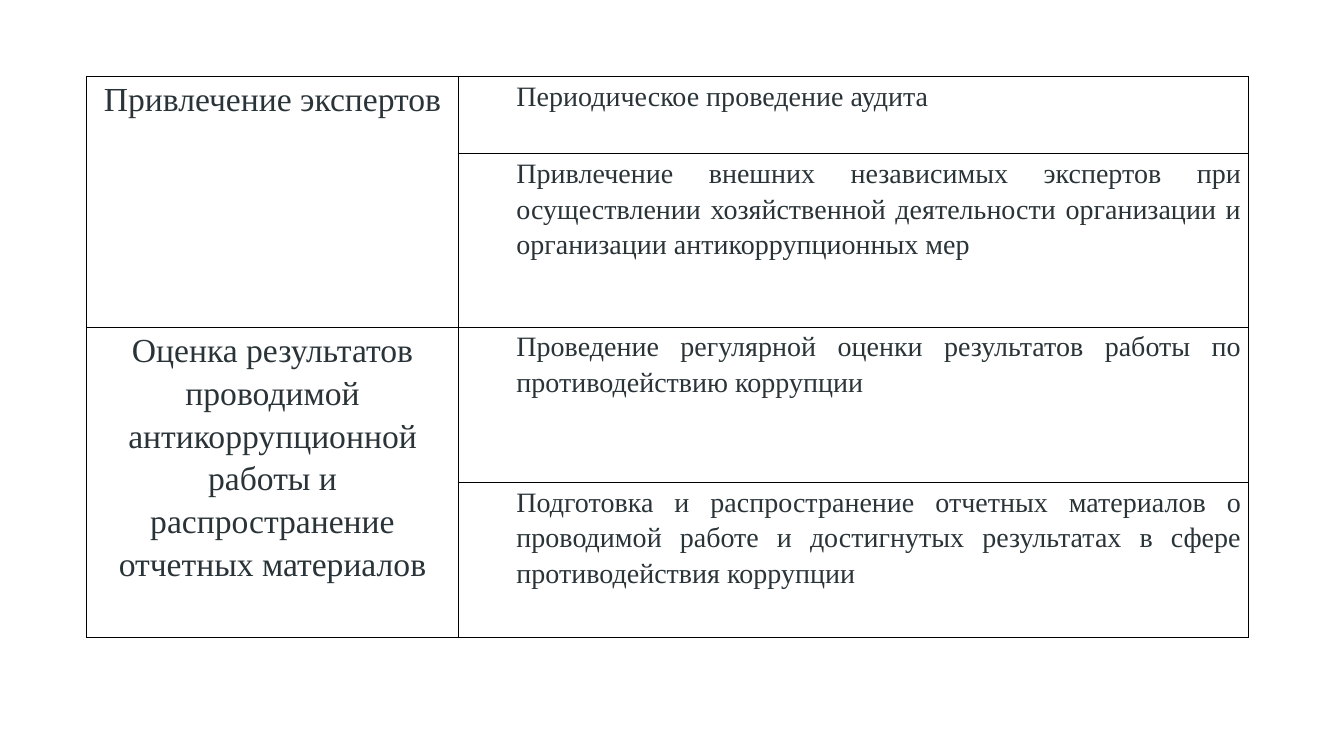
from lxml.etree import SubElement
from pptx import Presentation
from pptx.dml.color import RGBColor
from pptx.enum.text import MSO_ANCHOR, PP_ALIGN
from pptx.oxml.ns import qn
from pptx.util import Pt

COLORS = {"text": "2A3438", "border": "000000"}
FONT = "Times New Roman"
COL_WIDTHS = [265.7, 564.5]
ROW_HEIGHTS = [55.3, 123.8, 111, 111]
SECTIONS = [
    ("Привлечение экспертов", [
        "Периодическое проведение аудита",
        "Привлечение внешних независимых экспертов при осуществлении "
        "хозяйственной деятельности организации и организации антикоррупционных мер",
    ]),
    ("Оценка результатов проводимой антикоррупционной работы и "
     "распространение отчетных материалов", [
        "Проведение регулярной оценки результатов работы по противодействию коррупции",
        "Подготовка и распространение отчетных материалов о проводимой работе "
        "и достигнутых результатах в сфере противодействия коррупции",
    ]),
]


def set_borders(cell):
    """Draw a thin solid line on all four sides of a cell."""
    tcPr = cell._tc.get_or_add_tcPr()
    for i, side in enumerate(("lnL", "lnR", "lnT", "lnB")):
        ln = SubElement(tcPr, qn(f"a:{side}"), w=str(Pt(1)))
        fill = SubElement(ln, qn("a:solidFill"))
        SubElement(fill, qn("a:srgbClr"), val=COLORS["border"])
        tcPr.insert(i, ln)


def write_cell(cell, text, size, align, indent=0):
    """Set the text of a cell and format its paragraph."""
    cell.text_frame.text = text
    p = cell.text_frame.paragraphs[0]
    p.alignment = align
    p.line_spacing = 1.15
    pPr = p._p.get_or_add_pPr()
    pPr.set("marL", str(Pt(indent)))
    pPr.set("indent", "0")
    r = p.runs[0]
    r.font.size = Pt(size)
    r.font.name = FONT
    r.font.color.rgb = RGBColor.from_string(COLORS["text"])


def add_measures_table(s, left, top, col_widths, row_heights):
    """Place the table of sections and their measures."""
    table = s.shapes.add_table(
        len(row_heights), len(col_widths), Pt(left), Pt(top),
        Pt(sum(col_widths)), Pt(sum(row_heights))).table
    table.first_row = False
    table.horz_banding = False
    for col, width in zip(table.columns, col_widths):
        col.width = Pt(width)
    for row, height in zip(table.rows, row_heights):
        row.height = Pt(height)
    for cell in table.iter_cells():
        cell.fill.background()
        cell.margin_left = cell.margin_right = Pt(5.4)
        cell.margin_top = cell.margin_bottom = 0
        cell.vertical_anchor = MSO_ANCHOR.TOP
        set_borders(cell)

    first = 0
    for heading, measures in SECTIONS:
        last = first + len(measures) - 1
        table.cell(first, 0).merge(table.cell(last, 0))
        write_cell(table.cell(first, 0), heading, 24, PP_ALIGN.CENTER)
        for i, measure in enumerate(measures, first):
            write_cell(table.cell(i, 1), measure, 20, PP_ALIGN.JUSTIFY, 36)
        first = last + 1


def main():
    """Build the slide and save it."""
    prs = Presentation()
    prs.slide_width, prs.slide_height = Pt(960), Pt(540)
    s = prs.slides.add_slide(prs.slide_layouts[6])
    add_measures_table(s, 61.8, 54.6, COL_WIDTHS, ROW_HEIGHTS)
    prs.save("out.pptx")


if __name__ == "__main__":
    main()
